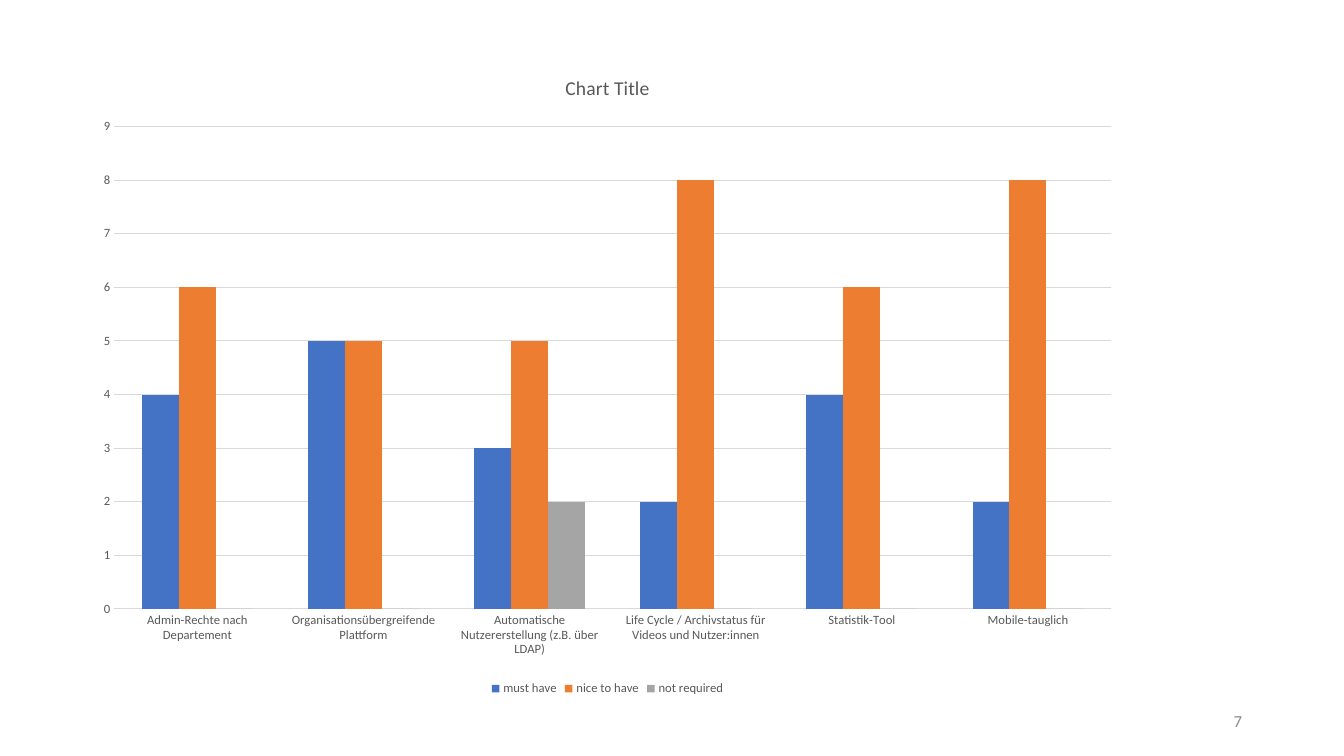
from collections import namedtuple
from dataclasses import dataclass

from pptx import Presentation
from pptx import util as u
from pptx.chart.data import CategoryChartData
from pptx.dml.color import RGBColor
from pptx.enum import chart as ch
from pptx.enum import text

Box = namedtuple("Box", "left top width height")
PAGE_WIDTH, PAGE_HEIGHT = 1344, 756
EMU_PER_PX = u.Inches(1) / 100.8


@dataclass(frozen=True)
class Theme:
    face: str = "Calibri"
    label: str = "595959"
    grid: str = "D9D9D9"
    number: str = "8C8C8C"
    series: tuple = ("4472C4", "ED7D31", "A5A5A5")
    title_size: int = 14
    number_size: int = 12
    label_size: int = 9


THEME = Theme()

FEATURES = (
    "Admin-Rechte nach Departement",
    "Organisationsübergreifende Plattform",
    "Automatische Nutzererstellung (z.B. über LDAP)",
    "Life Cycle / Archivstatus für Videos und Nutzer:innen",
    "Statistik-Tool",
    "Mobile-tauglich",
)
VOTES = {
    "must have": (4, 5, 3, 2, 4, 2),
    "nice to have": (6, 5, 5, 8, 6, 8),
    "not required": (0, 0, 2, 0, 0, 0),
}


def px(length):
    return u.Emu(round(length * EMU_PER_PX))


def style_font(font, size, color):
    font.name = THEME.face
    font.size = u.Pt(size)
    font.bold = False
    font.color.rgb = RGBColor.from_string(color)


def style_axis(axis):
    axis.major_tick_mark = axis.minor_tick_mark = ch.XL_TICK_MARK.NONE
    style_font(axis.tick_labels.font, THEME.label_size, THEME.label)
    axis.format.line.fill.background()


def add_votes_chart(page, box):
    data = CategoryChartData(number_format="General")
    data.categories = FEATURES
    for name, votes in VOTES.items():
        data.add_series(name, votes)
    chart = page.shapes.add_chart(
        ch.XL_CHART_TYPE.COLUMN_CLUSTERED, *map(px, box), data
    ).chart
    style_font(chart.font, THEME.label_size, THEME.label)

    chart.has_title = True
    title = chart.chart_title
    title.include_in_layout = False
    para = title.text_frame.paragraphs[0]
    para.text = "Chart Title"
    style_font(para.font, THEME.title_size, THEME.label)

    chart.has_legend = True
    chart.legend.position = ch.XL_LEGEND_POSITION.BOTTOM
    chart.legend.include_in_layout = False
    style_font(chart.legend.font, THEME.label_size, THEME.label)

    style_axis(chart.category_axis)
    values = chart.value_axis
    style_axis(values)
    values.minimum_scale, values.maximum_scale, values.major_unit = 0, 9, 1
    grid = values.major_gridlines.format.line
    grid.color.rgb = RGBColor.from_string(THEME.grid)
    grid.width = u.Pt(0.75)

    plot = chart.plots[0]
    plot.gap_width = 150
    plot.overlap = 0
    plot.vary_by_categories = False
    for series, color in zip(plot.series, THEME.series):
        series.format.fill.solid()
        series.format.fill.fore_color.rgb = RGBColor.from_string(color)


def add_page_number(page, box, number):
    frame = page.shapes.add_textbox(*map(px, box)).text_frame
    frame.word_wrap = True
    frame.vertical_anchor = text.MSO_ANCHOR.MIDDLE
    para = frame.paragraphs[0]
    para.text = str(number)
    para.alignment = text.PP_ALIGN.RIGHT
    style_font(para.font, THEME.number_size, THEME.number)


def main():
    deck = Presentation()
    deck.slide_width, deck.slide_height = px(PAGE_WIDTH), px(PAGE_HEIGHT)
    page = deck.slides.add_slide(deck.slide_layouts[6])
    add_page_number(page, Box(950, 701, 302, 40), 7)
    add_votes_chart(page, Box(83, 52, 1049, 648))
    deck.save("out.pptx")


if __name__ == "__main__":
    main()
